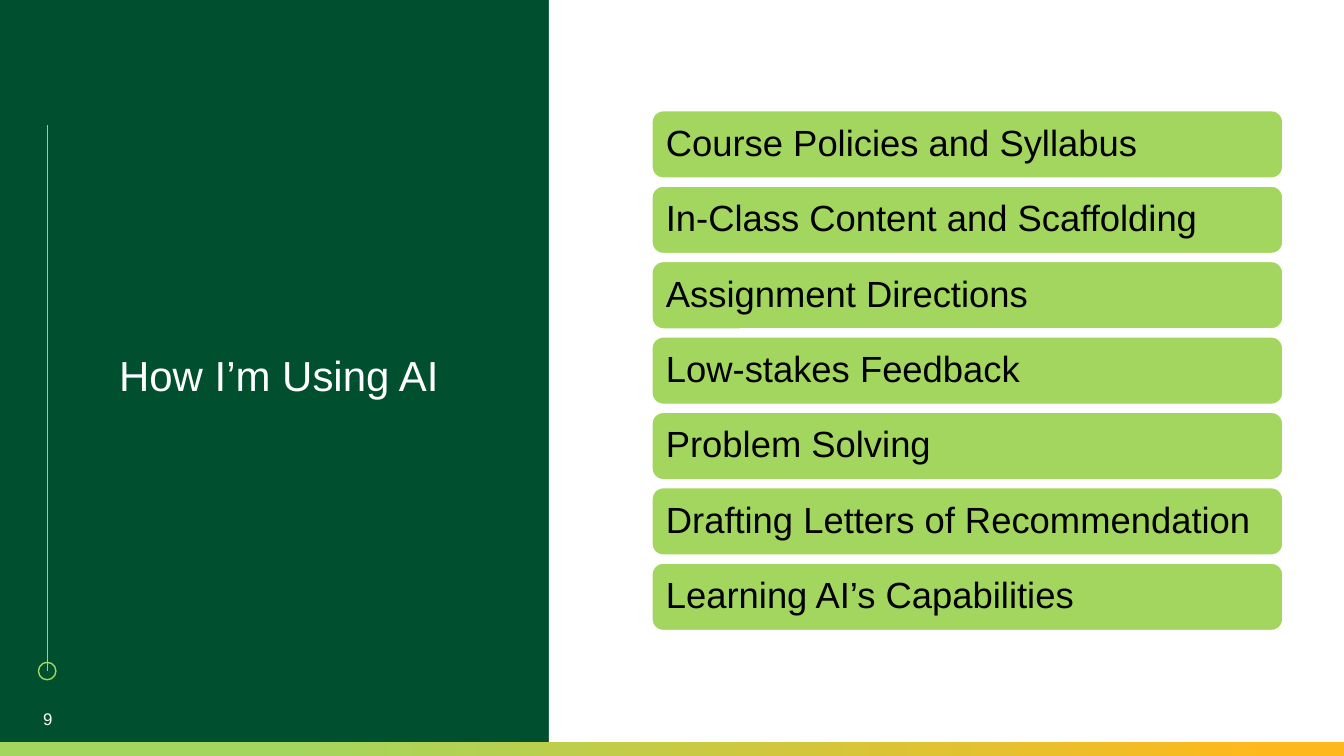
from pptx import Presentation
from pptx.dml.color import RGBColor
from pptx.enum.shapes import MSO_CONNECTOR as Connector, MSO_SHAPE as Shape
from pptx.enum.text import MSO_ANCHOR as Anchor, MSO_AUTO_SIZE as AutoSize, PP_ALIGN as Align
from pptx.oxml.ns import qn
from pptx.util import Cm, Pt
from lxml.etree import SubElement

DARK_GREEN, LIME, GOLD = "005030", "A3D65E", "FFB81C"
WHITE, BLACK = "FFFFFF", "000000"
WIDTH, HEIGHT = 33.87, 19.05
TOPICS = [
    "Course Policies and Syllabus",
    "In-Class Content and Scaffolding",
    "Assignment Directions",
    "Low-stakes Feedback",
    "Problem Solving",
    "Drafting Letters of Recommendation",
    "Learning AI’s Capabilities",
]
TOPIC_LEFT, TOPIC_TOP, TOPIC_WIDTH, TOPIC_HEIGHT, TOPIC_PITCH = 16.43, 2.79, 15.9, 1.7, 1.9


def color(hex_string):
    return RGBColor.from_string(hex_string)


def write(box, text, size, hex_string, align=Align.LEFT, inset=0.0, spacing=1.0):
    frame = box.text_frame
    frame.word_wrap = True
    frame.auto_size = AutoSize.NONE
    frame.vertical_anchor = Anchor.MIDDLE
    frame.margin_left = frame.margin_right = Cm(inset)
    frame.margin_top = frame.margin_bottom = Cm(inset)
    para = frame.paragraphs[0]
    para.alignment = align
    para.line_spacing = spacing
    span = para.add_run()
    span.text = text
    span.font.name = "Arial"
    span.font.size = Pt(size)
    span.font.color.rgb = color(hex_string)


def add_box(page, kind, left, top, width, height, fill=None, line=None):
    box = page.shapes.add_shape(kind, Cm(left), Cm(top), Cm(width), Cm(height))
    box.shadow.inherit = False
    if fill:
        box.fill.solid()
        box.fill.fore_color.rgb = color(fill)
    else:
        box.fill.background()
    if line:
        box.line.color.rgb = color(line)
        box.line.width = Pt(1)
    else:
        box.line.fill.background()
    return box


def add_line(page, left, top, bottom):
    line = page.shapes.add_connector(Connector.STRAIGHT, Cm(left), Cm(top), Cm(left), Cm(bottom))
    line.line.color.rgb = color(LIME)
    line.line.width = Pt(1)
    SubElement(line._element.spPr, qn("a:effectLst"))


def add_gradient_strip(page, top):
    strip = add_box(page, Shape.RECTANGLE, 0, top, WIDTH, HEIGHT - top)
    strip.fill.gradient()
    strip.fill.gradient_angle = 180
    for stop, (position, shade) in zip(strip.fill.gradient_stops, [(0.05, GOLD), (0.79, LIME)]):
        stop.position = position
        stop.color.rgb = color(shade)


def add_title(page, text):
    title = page.shapes.title
    title.left, title.top, title.width, title.height = Cm(3), Cm(8.38), Cm(8.79), Cm(2.31)
    write(title, text, 30, WHITE, spacing=0.9)


def add_page_number(page, text):
    number = page.shapes.add_textbox(Cm(0), Cm(17.6), Cm(2.41), Cm(1.02))
    write(number, text, 12, WHITE, Align.CENTER, inset=0.13)


def add_topics(page):
    for index, topic in enumerate(TOPICS):
        box = add_box(page, Shape.ROUNDED_RECTANGLE, TOPIC_LEFT, TOPIC_TOP + index * TOPIC_PITCH,
                      TOPIC_WIDTH, TOPIC_HEIGHT, LIME, WHITE)
        write(box, topic, 26, BLACK, inset=0.27, spacing=0.9)


def main():
    deck = Presentation()
    deck.slide_width, deck.slide_height = Cm(WIDTH), Cm(HEIGHT)
    page = deck.slides.add_slide(deck.slide_layouts[5])
    page.background.fill.solid()
    page.background.fill.fore_color.rgb = color(DARK_GREEN)
    add_box(page, Shape.RECTANGLE, 13.83, 0, WIDTH - 13.83, HEIGHT, WHITE)
    add_line(page, 1.19, 3.15, 16.92)
    add_box(page, Shape.OVAL, 0.97, 16.69, 0.44, 0.44, line=LIME)
    add_gradient_strip(page, 18.71)
    add_title(page, "How I’m Using AI")
    add_page_number(page, "9")
    add_topics(page)
    deck.save("out.pptx")


if __name__ == "__main__":
    main()
